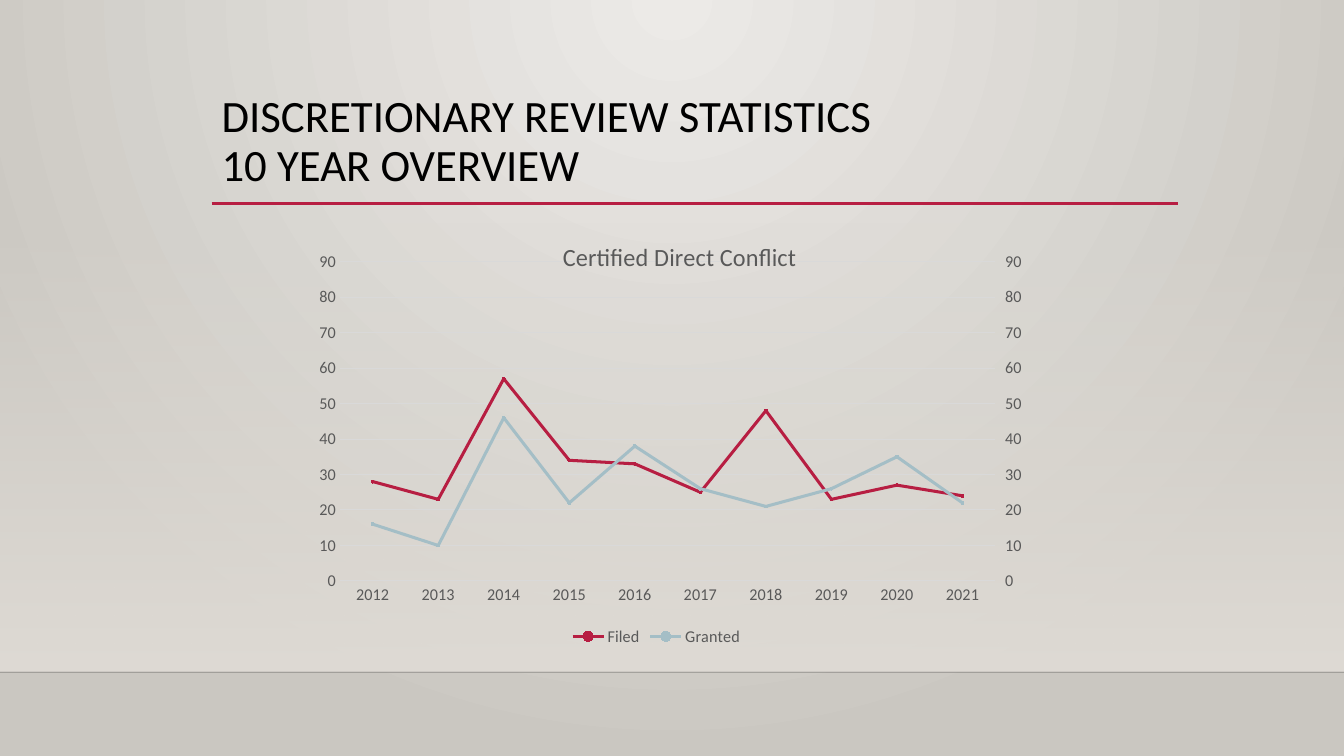
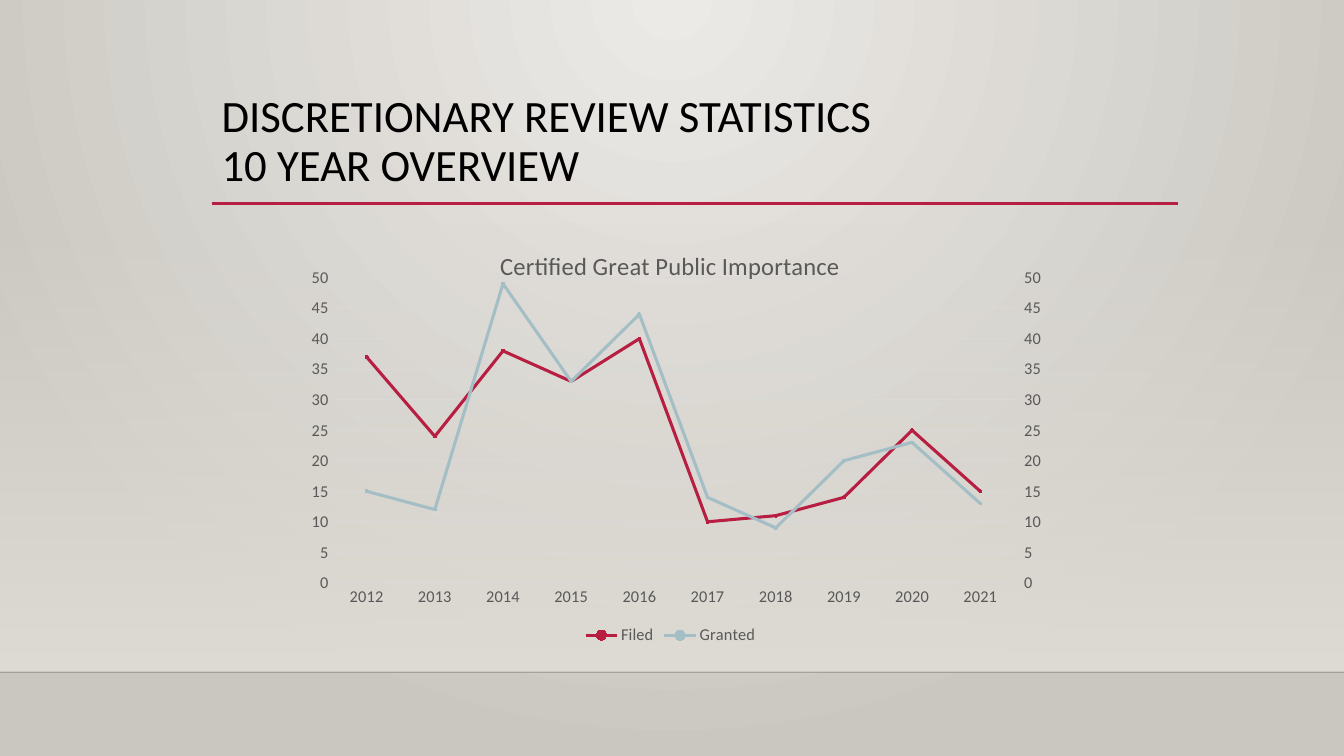
"""Build two slides of discretionary review statistics with dual-axis line charts."""
from copy import deepcopy

from lxml.etree import SubElement
from pptx import Presentation
from pptx.chart.data import CategoryChartData
from pptx.dml.color import RGBColor
from pptx.enum.chart import XL_CHART_TYPE as ChartType
from pptx.enum.chart import XL_LEGEND_POSITION as LegendPos
from pptx.enum.chart import XL_MARKER_STYLE as MarkerStyle
from pptx.enum.chart import XL_TICK_MARK as TickMark
from pptx.enum.shapes import MSO_CONNECTOR as ConnectorType
from pptx.enum.shapes import MSO_SHAPE as ShapeType
from pptx.enum.text import MSO_ANCHOR as Anchor
from pptx.enum.text import MSO_AUTO_SIZE as AutoSize
from pptx.enum.text import PP_ALIGN as Align
from pptx.oxml.ns import qn
from pptx.util import Cm, Pt

FONT = "Calibri"
BLACK = RGBColor(0, 0, 0)
RED = RGBColor(0xB7, 0x1E, 0x42)
BLUE = RGBColor(0xA4, 0xBE, 0xC6)
GRAY = RGBColor(0x59, 0x59, 0x59)
GRID = RGBColor(0xD9, 0xD9, 0xD9)
BAND = RGBColor(0xDF, 0xDB, 0xD5)
BG_LIGHT = RGBColor(0xEC, 0xEA, 0xE7)
BG_DARK = RGBColor(0xCA, 0xC7, 0xC1)

WIDTH, HEIGHT = 33.87, 19.05
TITLE = "DISCRETIONARY REVIEW STATISTICS\v10 YEAR OVERVIEW"
TITLE_BOX = (5.33, 2.24, 24.33, 2.92)
YEARS = [str(year) for year in range(2012, 2022)]
SERIES_COLORS = {"Filed": RED, "Granted": BLUE}
CHARTS = [
    {
        "title": "Certified Direct Conflict",
        "title_at": (0.36, 0.06),
        "box": (7.72, 5.26, 18.03, 11.13),
        "plot_left": 0.048,
        "max": 90,
        "step": 10,
        "Filed": (28, 23, 57, 34, 33, 25, 48, 23, 27, 24),
        "Granted": (16, 10, 46, 22, 38, 26, 21, 26, 35, 22),
    },
    {
        "title": "Certified Great Public Importance",
        "title_at": (0.26, 0.04),
        "box": (7.72, 5.72, 18.52, 10.64),
        "plot_left": 0.036,
        "max": 50,
        "step": 5,
        "Filed": (37, 24, 38, 33, 40, 10, 11, 14, 25, 15),
        "Granted": (15, 12, 49, 33, 44, 14, 9, 20, 23, 13),
    },
]


def cm(values):
    return [Cm(v) for v in values]


def set_gradient(fill, *colors):
    fill.gradient()
    for stop, color in zip(fill.gradient_stops, colors):
        stop.color.rgb = color


def set_alpha(element, percent):
    color = next(element.iter(qn("a:srgbClr")))
    SubElement(color, qn("a:alpha")).set("val", str(percent * 1000))


def set_background(master):
    set_gradient(master.background.fill, BG_LIGHT, BG_DARK)
    lin = next(master.element.iter(qn("a:lin")))
    grad = lin.getparent()
    grad.remove(lin)
    circle = SubElement(grad, qn("a:path"))
    circle.set("path", "circle")
    focus = SubElement(circle, qn("a:fillToRect"))
    for side, percent in zip("ltrb", (43, 0, 43, 100)):
        focus.set(side, str(percent * 1000))


def add_rule(shapes, left, right, y, color, width):
    rule = shapes.add_connector(ConnectorType.STRAIGHT, *cm((left, y, right, y)))
    rule.line.color.rgb = color
    rule.line.width = Pt(width)
    SubElement(rule.element.find(qn("p:spPr")), qn("a:effectLst"))
    return rule


def decorate_layout(layout, shapes):
    band = shapes.add_shape(ShapeType.RECTANGLE, *cm((0, 5.59, WIDTH, 11.33)))
    band.shadow.inherit = False
    band.line.fill.background()
    set_gradient(band.fill, BAND, BAND)
    band.fill.gradient_angle = 270
    set_alpha(band.element, 0)
    floor = add_rule(shapes, 0, WIDTH, 16.94, BLACK, 1)
    set_alpha(floor.element, 20)
    underline = add_rule(shapes, 5.33, 29.69, 5.13, RED, 2.5)
    for number, sp in enumerate((band, floor, underline), start=20):
        next(sp.element.iter(qn("p:cNvPr"))).set("id", str(number))
        layout.shapes.element.append(sp.element)


def format_title(title):
    title.left, title.top, title.width, title.height = cm(TITLE_BOX)
    tf = title.text_frame
    tf.text = TITLE
    tf.auto_size = AutoSize.NONE
    tf.vertical_anchor = Anchor.TOP
    p = tf.paragraphs[0]
    p.alignment = Align.LEFT
    p.line_spacing = 0.9
    p.font.name = FONT
    p.font.size = Pt(32)
    p.font.color.rgb = BLACK


def set_layout(parent, index, **values):
    for old in parent.findall(qn("c:layout")):
        parent.remove(old)
    layout = parent.makeelement(qn("c:layout"))
    parent.insert(index, layout)
    manual = SubElement(layout, qn("c:manualLayout"))
    for tag, value in values.items():
        SubElement(manual, qn(f"c:{tag}")).set("val", str(value))


def move_to_right_axis(plot_area):
    """Give the last series its own line group and value axis."""
    group = plot_area.find(qn("c:lineChart"))
    right = deepcopy(group)
    group.remove(group.findall(qn("c:ser"))[-1])
    right.remove(right.find(qn("c:ser")))
    group.addnext(right)
    cat, val = (deepcopy(plot_area.find(qn(f"c:{t}"))) for t in ("catAx", "valAx"))
    val.remove(val.find(qn("c:majorGridlines")))
    cat_id, val_id = "50010", "50020"
    for axis_id, new_id in zip(right.findall(qn("c:axId")), (cat_id, val_id)):
        axis_id.set("val", new_id)
    settings = (
        (cat, {"axId": cat_id, "crossAx": val_id, "delete": "1"}),
        (val, {"axId": val_id, "crossAx": cat_id, "axPos": "r",
               "crosses": "max", "majorTickMark": "out"}),
    )
    anchor = plot_area.find(qn("c:valAx"))
    for axis, values in settings:
        for tag, value in values.items():
            axis.find(qn(f"c:{tag}")).set("val", value)
        anchor.addnext(axis)


def style_font(font, size):
    font.name = FONT
    font.size = Pt(size)
    font.bold = False
    font.color.rgb = GRAY


def style_series(series, color):
    series.smooth = False
    series.format.line.color.rgb = color
    series.format.line.width = Pt(2.22)
    marker = series.marker
    marker.style = MarkerStyle.CIRCLE
    marker.size = 2
    marker.format.fill.solid()
    marker.format.fill.fore_color.rgb = color
    marker.format.line.color.rgb = color


def style_axes(chart, spec):
    for axis in (chart.category_axis, chart.value_axis):
        axis.major_tick_mark = axis.minor_tick_mark = TickMark.NONE
        style_font(axis.tick_labels.font, 11.8)
    chart.category_axis.format.line.color.rgb = GRID
    chart.category_axis.format.line.width = Pt(0.75)
    val = chart.value_axis
    val.minimum_scale, val.maximum_scale = 0, spec["max"]
    val.major_unit = spec["step"]
    val.format.line.fill.background()
    val.major_gridlines.format.line.color.rgb = GRID
    val.major_gridlines.format.line.width = Pt(0.75)


def add_line_chart(slide, spec):
    data = CategoryChartData()
    data.categories = YEARS
    for name in SERIES_COLORS:
        data.add_series(name, spec[name])
    frame = slide.shapes.add_chart(
        ChartType.LINE_MARKERS_STACKED, *cm(spec["box"]), data)
    chart = frame.chart
    style_font(chart.font, 11.8)
    plot = chart.plots[0]
    plot.vary_by_categories = False
    for series in plot.series:
        style_series(series, SERIES_COLORS[series.name])
    style_axes(chart, spec)

    chart.has_title = True
    title = chart.chart_title
    title.text_frame.text = spec["title"]
    style_font(title.text_frame.paragraphs[0].font, 17.7)
    x, y = spec["title_at"]
    set_layout(title.element, 1, xMode="edge", yMode="edge", x=x, y=y)
    chart.has_legend = True
    chart.legend.position = LegendPos.BOTTOM
    chart.legend.include_in_layout = False
    style_font(chart.legend.font, 11.8)

    plot_area = next(chart.element.iter(qn("c:plotArea")))
    set_layout(plot_area, 0, layoutTarget="inner", xMode="edge", yMode="edge",
               x=spec["plot_left"], y=0.12, w=0.936, h=0.723)
    move_to_right_axis(plot_area)


def main():
    prs = Presentation()
    prs.slide_width, prs.slide_height = cm((WIDTH, HEIGHT))
    set_background(prs.slide_master)
    layout = prs.slide_layouts[5]
    slides = [prs.slides.add_slide(layout) for _ in CHARTS]
    decorate_layout(layout, slides[0].shapes)
    for slide, chart in zip(slides, CHARTS):
        format_title(slide.shapes.title)
        add_line_chart(slide, chart)
    prs.save("out.pptx")


if __name__ == "__main__":
    main()
